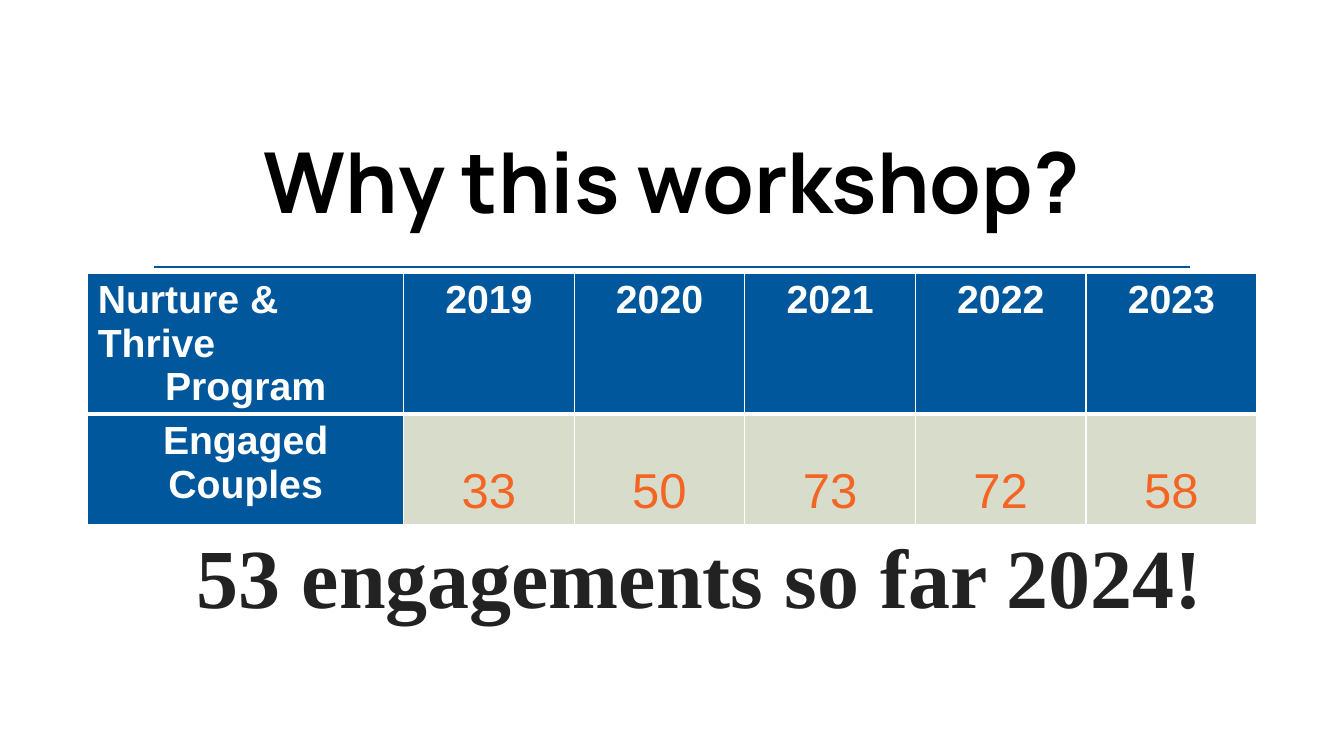
"""Build the workshop slide with its table of engaged couples by year."""
from lxml import etree
from pptx import Presentation
from pptx.dml.color import RGBColor
from pptx.enum.shapes import MSO_CONNECTOR
from pptx.enum.text import MSO_ANCHOR, MSO_AUTO_SIZE, PP_ALIGN
from pptx.oxml.ns import qn
from pptx.util import Cm, Pt

CENTER, LEFT = PP_ALIGN.CENTER, PP_ALIGN.LEFT
TOP, MIDDLE, BOTTOM = MSO_ANCHOR.TOP, MSO_ANCHOR.MIDDLE, MSO_ANCHOR.BOTTOM
FIT_SHAPE, NO_FIT = MSO_AUTO_SIZE.SHAPE_TO_FIT_TEXT, MSO_AUTO_SIZE.NONE
STRAIGHT = MSO_CONNECTOR.STRAIGHT
TITLE_ONLY = 5

COLORS = {
    "blue": "01579B",
    "sage": "D8DDCB",
    "orange": "F46524",
    "white": "FFFFFF",
    "black": "000000",
    "ink": "222222",
}
COUPLES = {"2019": "33", "2020": "50", "2021": "73", "2022": "72", "2023": "58"}


def rgb(name):
    return RGBColor.from_string(COLORS[name])


def format_text(tf, font, size, color, bold=True):
    for p in tf.paragraphs:
        p.alignment = CENTER
        for r in p.runs:
            r.font.name = font
            r.font.size = Pt(size)
            r.font.bold = bold
            r.font.color.rgb = rgb(color)


def add_title(s, text):
    sp = s.shapes.title
    sp.left, sp.top, sp.width, sp.height = Cm(3.6), Cm(2.72), Cm(26.67), Cm(3.63)
    tf = sp.text_frame
    tf.text = text
    tf.auto_size = NO_FIT
    tf.vertical_anchor = MIDDLE
    format_text(tf, "Manrope", 60, "black")


def add_rule(s):
    line = s.shapes.add_connector(STRAIGHT, Cm(3.89), Cm(6.73), Cm(30), Cm(6.73))
    line.line.color.rgb = rgb("blue")
    line.line.width = Pt(1.25)
    etree.SubElement(line._element.spPr, qn("a:effectLst"))


def set_borders(cell, bottom):
    tcPr = cell._tc.get_or_add_tcPr()
    widths = {"a:lnL": 1, "a:lnR": 1, "a:lnT": 1, "a:lnB": bottom}
    for i, (tag, width) in enumerate(widths.items()):
        ln = etree.Element(qn(tag), w=str(Pt(width)))
        fill = etree.SubElement(ln, qn("a:solidFill"))
        etree.SubElement(fill, qn("a:srgbClr"), val=COLORS["white"])
        tcPr.insert(i, ln)


def fill_cell(cell, text, is_value, bottom):
    cell.text_frame.text = text
    cell.fill.solid()
    cell.fill.fore_color.rgb = rgb("sage" if is_value else "blue")
    cell.vertical_anchor = BOTTOM if is_value else TOP
    if is_value:
        format_text(cell.text_frame, "Arial", 35, "orange", bold=False)
    else:
        format_text(cell.text_frame, "Arial", 28, "white")
    set_borders(cell, bottom)


def add_couples_table(s):
    rows = [
        ["Nurture & Thrive\nProgram", *COUPLES],
        ["Engaged Couples", *COUPLES.values()],
    ]
    frame = s.shapes.add_table(
        len(rows), len(rows[0]), Cm(2.21), Cm(6.88), Cm(29.46), Cm(6.32))
    table = frame.table
    for i, column in enumerate(table.columns):
        column.width = Cm(4.3 if i else 7.96)
    for row, height in zip(table.rows, (3.55, 2.77)):
        row.height = Cm(height)
    for i, texts in enumerate(rows):
        for j, text in enumerate(texts):
            fill_cell(table.cell(i, j), text, i > 0 and j > 0, 1 if i else 3)
    table.cell(0, 0).text_frame.paragraphs[0].alignment = LEFT


def add_callout(s, text):
    tf = s.shapes.add_textbox(Cm(2.46), Cm(13.08), Cm(29.72), Cm(2.82)).text_frame
    tf.word_wrap = True
    tf.auto_size = FIT_SHAPE
    tf.text = text
    format_text(tf, "Times New Roman", 60, "ink")
    pPr = tf.paragraphs[0]._p.get_or_add_pPr()
    pPr.set("marL", str(Cm(0.64)))
    pPr.set("indent", "0")


def main():
    prs = Presentation()
    prs.slide_width, prs.slide_height = Cm(33.87), Cm(19.05)
    s = prs.slides.add_slide(prs.slide_layouts[TITLE_ONLY])
    add_rule(s)
    add_title(s, "Why this workshop?")
    add_couples_table(s)
    add_callout(s, "53 engagements so far 2024!")
    prs.save("out.pptx")


if __name__ == "__main__":
    main()
